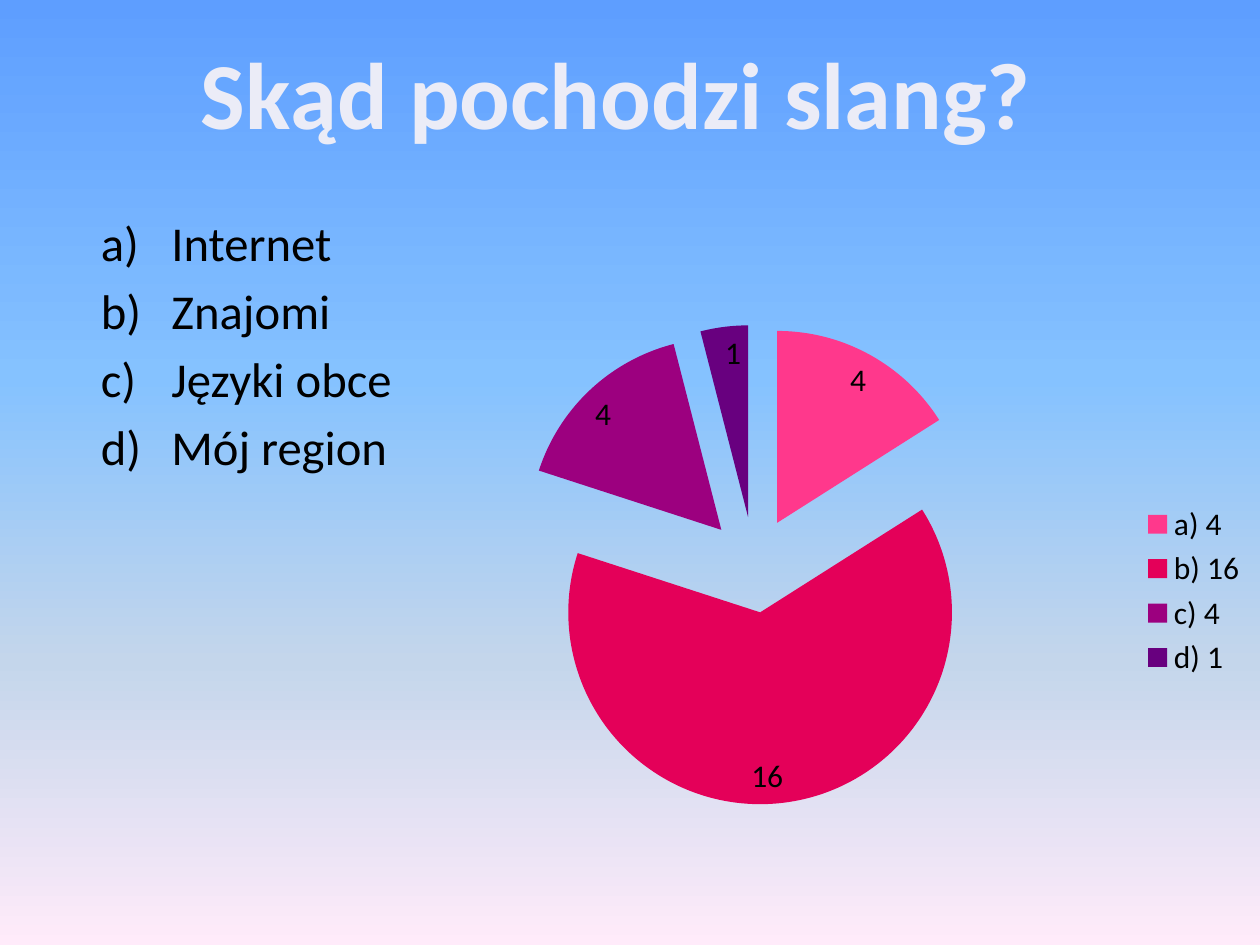
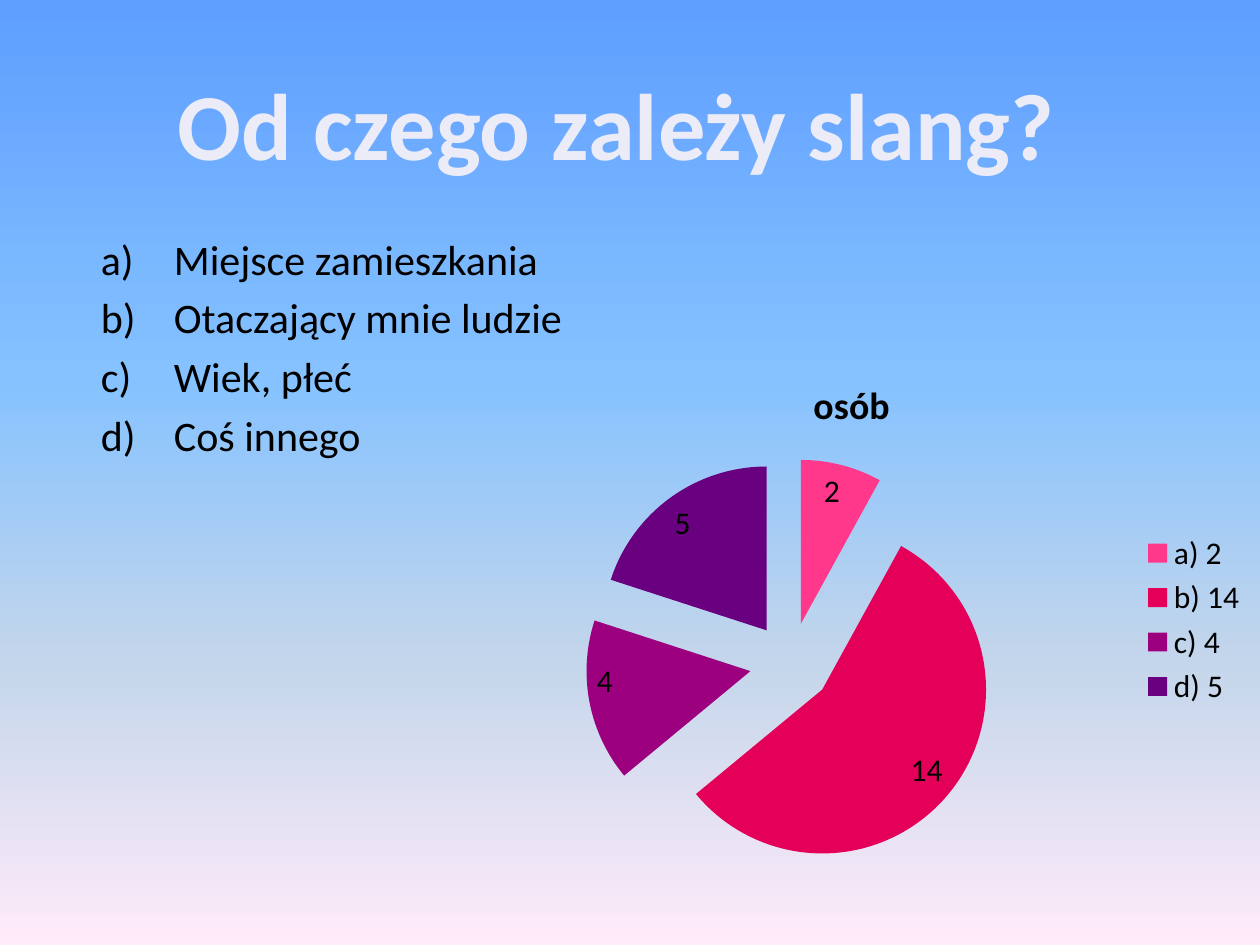
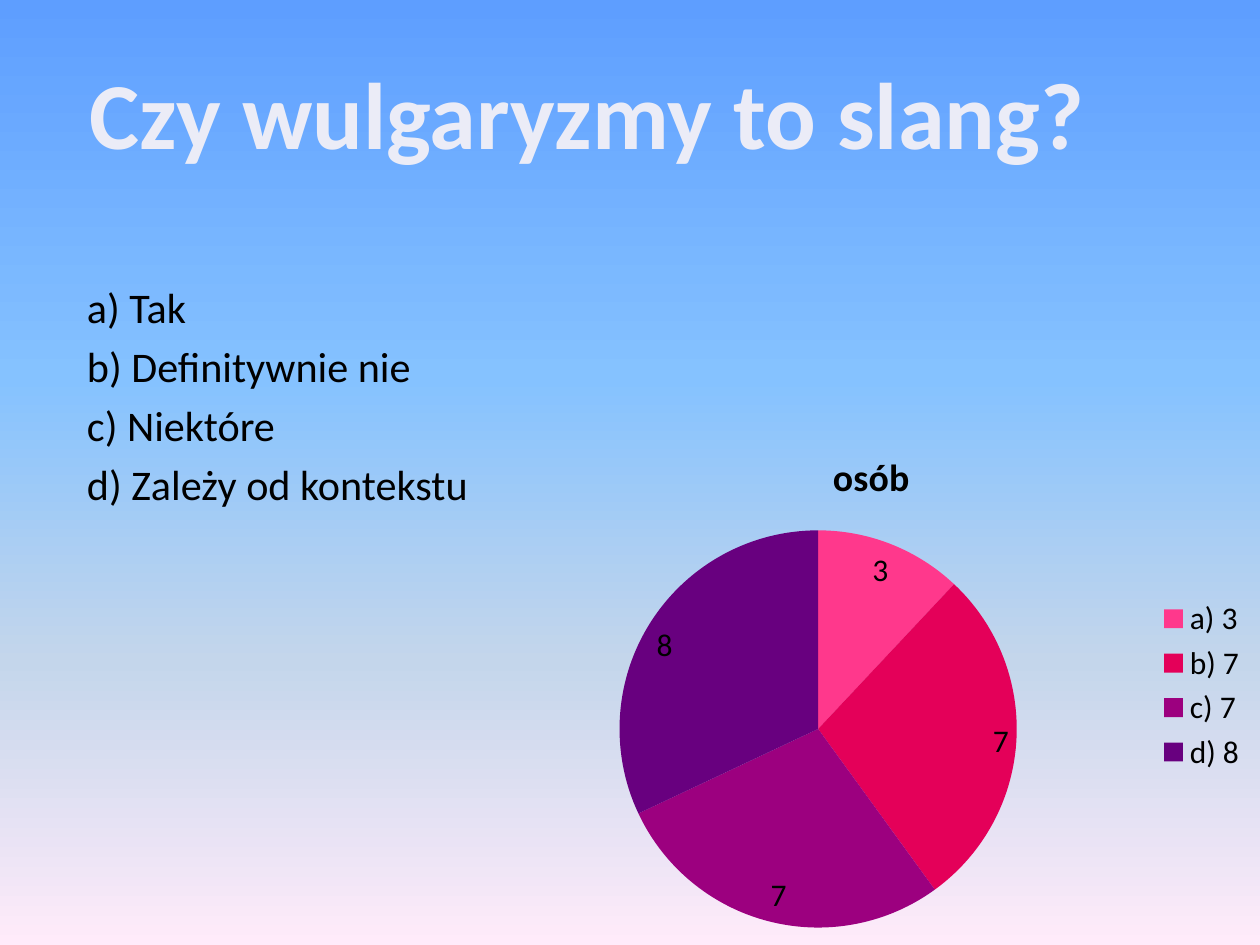
from lxml.etree import SubElement
from pptx import Presentation
from pptx.chart.data import CategoryChartData as Data
from pptx.dml.color import RGBColor
from pptx.enum.chart import XL_CHART_TYPE as Kind, XL_LABEL_POSITION as Spot, XL_LEGEND_POSITION as Side
from pptx.enum.text import MSO_ANCHOR as Anchor, MSO_AUTO_SIZE as Fit, PP_ALIGN as Align
from pptx.oxml import parse_xml
from pptx.oxml.ns import nsdecls, qn
from pptx.util import Inches, Pt

FONT = "Calibri"
BLACK = RGBColor(0x00, 0x00, 0x00)
PALE = RGBColor(0xEB, 0xEC, 0xF7)
NAVY = RGBColor(0x00, 0x26, 0x75)
PINK = RGBColor(0xFF, 0x38, 0x8C)
RED = RGBColor(0xE4, 0x00, 0x59)
PLUM = RGBColor(0x9C, 0x00, 0x7F)
GRAPE = RGBColor(0x68, 0x00, 0x7F)
SLICES = [PINK, RED, PLUM, GRAPE]
SKY = [
    (0, RGBColor(0x5E, 0x9E, 0xFF)),
    (40, RGBColor(0x85, 0xC2, 0xFF)),
    (70, RGBColor(0xC4, 0xD6, 0xEB)),
    (100, RGBColor(0xFF, 0xEB, 0xFA)),
]

POLLS = [
    {
        "title": "Skąd pochodzi slang?", "head": (1.46, 0.23, 6.86, 1.01),
        "items": ["Internet", "Znajomi", "Języki obce", "Mój region"],
        "list": (0.7, 1.64, 7, 1.92), "size": 27.8, "indent": 0.56,
        "votes": [4, 16, 4, 1], "pie": (3.52, 2.58, 6.48, 4.22),
        "burst": 25, "name": "", "plot": (0.085, 0, 0.591, 0.902),
    },
    {
        "title": "Od czego zależy slang?", "head": (1.27, 0.47, 7.24, 1.01),
        "items": ["Miejsce zamieszkania", "Otaczający mnie ludzie", "Wiek, płeć", "Coś innego"],
        "list": (0.7, 1.8, 7, 1.92), "size": 24, "indent": 0.58,
        "votes": [2, 14, 4, 5], "pie": (3.52, 2.81, 6.48, 4.22),
        "burst": 25, "name": "osób", "plot": None,
    },
    {
        "title": "Czy wulgaryzmy to slang?", "head": (0.57, 0.39, 8.18, 1.01),
        "items": ["a) Tak", "b) Definitywnie nie", "c) Niektóre", "d) Zależy od kontekstu"],
        "list": (0.59, 2.18, 7, 1.92), "size": 24.1, "indent": 0,
        "votes": [3, 7, 7, 8], "pie": (3.83, 3.38, 6.17, 4.12),
        "burst": 0, "name": "osób", "plot": None,
    },
]


def place(shape, box):
    """Move a shape to a box given in inches."""
    shape.left, shape.top, shape.width, shape.height = map(Inches, box)


def style(font, size, color, bold=False):
    """Set the face, size, colour and weight of a font."""
    font.name, font.size, font.bold = FONT, Pt(size), bold
    font.color.rgb = color


def paint(master):
    """Give the master the shared sky gradient."""
    fill = master.background.fill
    fill.gradient()
    fill.gradient_angle = 270
    stops = master._element.find(".//" + qn("a:gsLst"))
    for old in list(stops):
        stops.remove(old)
    for pos, color in SKY:
        stop = SubElement(stops, qn("a:gs"), pos=str(pos * 1000))
        SubElement(stop, qn("a:srgbClr"), val=str(color))


def add_title(slide, poll):
    """Fill the title with outlined text."""
    title = slide.shapes.title
    place(title, poll["head"])
    frame = title.text_frame
    frame.word_wrap, frame.auto_size = False, Fit.SHAPE_TO_FIT_TEXT
    frame.vertical_anchor = Anchor.TOP
    para = frame.paragraphs[0]
    para.alignment = Align.CENTER
    run = para.add_run()
    run.text = poll["title"]
    style(run.font, 54, PALE, True)
    line = parse_xml(
        f'<a:ln {nsdecls("a")} w="{Pt(2.48)}"><a:solidFill>'
        f'<a:srgbClr val="{NAVY}"/></a:solidFill></a:ln>')
    run.font._element.insert(0, line)


def add_list(slide, poll):
    """Fill the body with the answers, lettered when indented."""
    body = slide.placeholders[1]
    place(body, poll["list"])
    frame = body.text_frame
    frame.auto_size, frame.vertical_anchor = Fit.NONE, Anchor.TOP
    for i, item in enumerate(poll["items"]):
        para = frame.add_paragraph() if i else frame.paragraphs[0]
        para.alignment = Align.LEFT
        if poll["indent"]:
            props = para._p.get_or_add_pPr()
            gap = Inches(poll["indent"])
            props.set("marL", str(gap))
            props.set("indent", str(-gap))
            SubElement(props, qn("a:buFont"), typeface=FONT)
            SubElement(props, qn("a:buAutoNum"), type="alphaLcParenR")
        run = para.add_run()
        run.text = item
        style(run.font, poll["size"], BLACK)


def add_pie(slide, poll):
    """Draw the votes as a pie with a legend."""
    data = Data()
    data.categories = [f"{key}) {vote}" for key, vote in zip("abcd", poll["votes"])]
    data.add_series(poll["name"] or "Series 1", poll["votes"])
    box = map(Inches, poll["pie"])
    chart = slide.shapes.add_chart(Kind.PIE, *box, data).chart
    style(chart.font, 18, BLACK)
    chart.has_legend = True
    chart.legend.position = Side.RIGHT
    chart.legend.include_in_layout = False
    chart.has_title = bool(poll["name"])
    if poll["name"]:
        run = chart.chart_title.text_frame.paragraphs[0].add_run()
        run.text = poll["name"]
        style(run.font, 21.6, BLACK, True)

    plot = chart.plots[0]
    plot.vary_by_categories = True
    plot.has_data_labels = True
    labels = plot.data_labels
    labels.show_value, labels.show_percentage = True, False
    labels.position = Spot.INSIDE_END
    series = plot.series[0]
    for i, color in enumerate(SLICES):
        fill = series.points[i].format.fill
        fill.solid()
        fill.fore_color.rgb = color
    if poll["burst"]:
        burst = parse_xml(f'<c:explosion {nsdecls("c")} val="{poll["burst"]}"/>')
        series._element.find(qn("c:tx")).addnext(burst)
    if poll["plot"]:
        set_plot(chart, poll["plot"])


def set_plot(chart, box):
    """Fix the inner plot area as fractions of the chart."""
    area = chart._chartSpace.find(".//" + qn("c:plotArea"))
    old = area.find(qn("c:layout"))
    if old is not None:
        area.remove(old)
    layout = parse_xml(f'<c:layout {nsdecls("c")}><c:manualLayout/></c:layout>')
    rules = [("layoutTarget", "inner"), ("xMode", "edge"), ("yMode", "edge")]
    for tag, val in rules + list(zip("xywh", box)):
        SubElement(layout[0], qn("c:" + tag), val=str(val))
    area.insert(0, layout)


def main():
    """Build the deck."""
    deck = Presentation()
    deck.slide_width, deck.slide_height = Inches(10), Inches(7.5)
    paint(deck.slide_master)
    for poll in POLLS:
        slide = deck.slides.add_slide(deck.slide_layouts[0])
        add_list(slide, poll)
        add_pie(slide, poll)
        add_title(slide, poll)
    deck.save("out.pptx")


if __name__ == "__main__":
    main()
